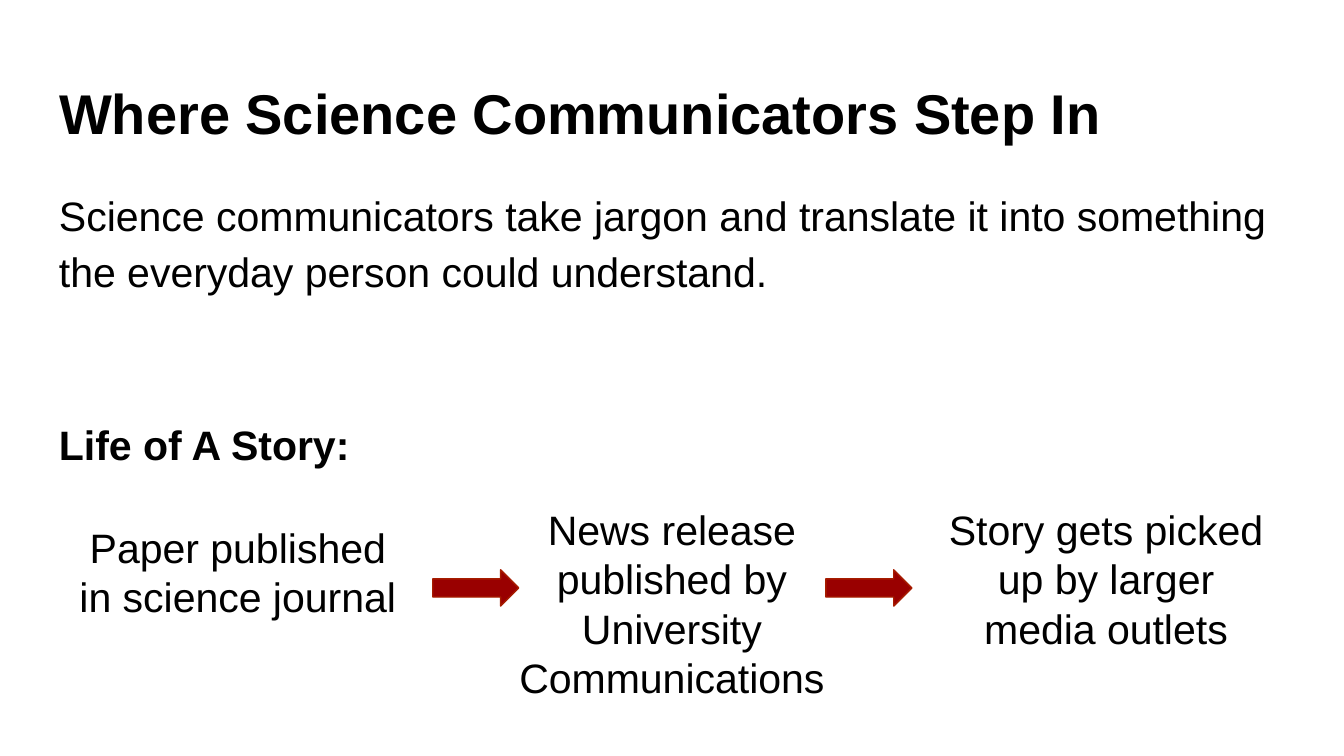
from dataclasses import dataclass

from pptx import Presentation
from pptx.dml.color import RGBColor
from pptx.enum.shapes import MSO_SHAPE as Shape
from pptx.enum.text import MSO_ANCHOR as Anchor, MSO_AUTO_SIZE as AutoSize, PP_ALIGN as Align
from pptx.util import Emu, Pt

PX = 4572
BLACK, DARK_RED, RED = "000000", "990000", "A61C00"
BODY_SIZE = 22


@dataclass(frozen=True)
class Frame:
    left: int
    top: int
    width: int
    height: int

    def emu(self) -> tuple[Emu, ...]:
        return tuple(Emu(n * PX) for n in (self.left, self.top, self.width, self.height))


@dataclass(frozen=True)
class Step:
    text: str
    frame: Frame


STEP_TEXTS = [
    ("Paper published in science journal", 757),
    ("News release published by University Communications", 731),
    ("Story gets picked up by larger media outlets", 731),
]
STEPS = [
    Step(text, Frame(94 + 646 * i, top, 520, 330))
    for i, (text, top) in enumerate(STEP_TEXTS)
]
ARROWS = [Frame(644 + 585 * i, 848, 128, 54) for i in range(2)]


def color(value: str) -> RGBColor:
    return RGBColor.from_string(value)


def prepare_text(box):
    text_frame = box.text_frame
    text_frame.word_wrap = True
    text_frame.auto_size = AutoSize.NONE
    text_frame.vertical_anchor = Anchor.TOP
    text_frame.margin_left = text_frame.margin_right = Emu(20 * PX)
    text_frame.margin_top = text_frame.margin_bottom = Emu(20 * PX)
    return text_frame


def write(para, text: str, size: int = BODY_SIZE, bold: bool = False, align=Align.LEFT) -> None:
    para.text = text
    para.alignment = align
    para.font.name = "Arial"
    para.font.size = Pt(size)
    para.font.bold = bold
    para.font.color.rgb = color(BLACK)


def add_title(page, text: str, frame: Frame) -> None:
    title = page.shapes.title
    title.left, title.top, title.width, title.height = frame.emu()
    write(prepare_text(title).paragraphs[0], text, size=30, bold=True)


def add_body(page, frame: Frame) -> None:
    text_frame = prepare_text(page.shapes.add_textbox(*frame.emu()))
    intro, heading = text_frame.paragraphs[0], text_frame.add_paragraph()
    write(
        intro,
        "Science communicators take jargon and translate it into something "
        "the everyday person could understand.",
    )
    write(heading, "Life of A Story:", bold=True)
    intro.line_spacing = heading.line_spacing = 1.15
    heading.space_before = Pt(62)


def add_step(page, step: Step) -> None:
    box = page.shapes.add_textbox(*step.frame.emu())
    write(prepare_text(box).paragraphs[0], step.text, align=Align.CENTER)


def add_arrow(page, frame: Frame) -> None:
    arrow = page.shapes.add_shape(Shape.RIGHT_ARROW, *frame.emu())
    arrow.shadow.inherit = False
    arrow.fill.solid()
    arrow.fill.fore_color.rgb = color(DARK_RED)
    arrow.line.color.rgb = color(RED)
    arrow.line.width = Pt(0.75)


def main() -> None:
    deck = Presentation()
    deck.slide_width, deck.slide_height = Emu(2000 * PX), Emu(1125 * PX)
    page = deck.slides.add_slide(deck.slide_layouts[5])
    add_title(page, "Where Science Communicators Step In", Frame(68, 97, 1864, 126))
    add_body(page, Frame(68, 252, 1864, 748))
    for step in STEPS:
        add_step(page, step)
    for frame in ARROWS:
        add_arrow(page, frame)
    deck.save("out.pptx")


if __name__ == "__main__":
    main()
